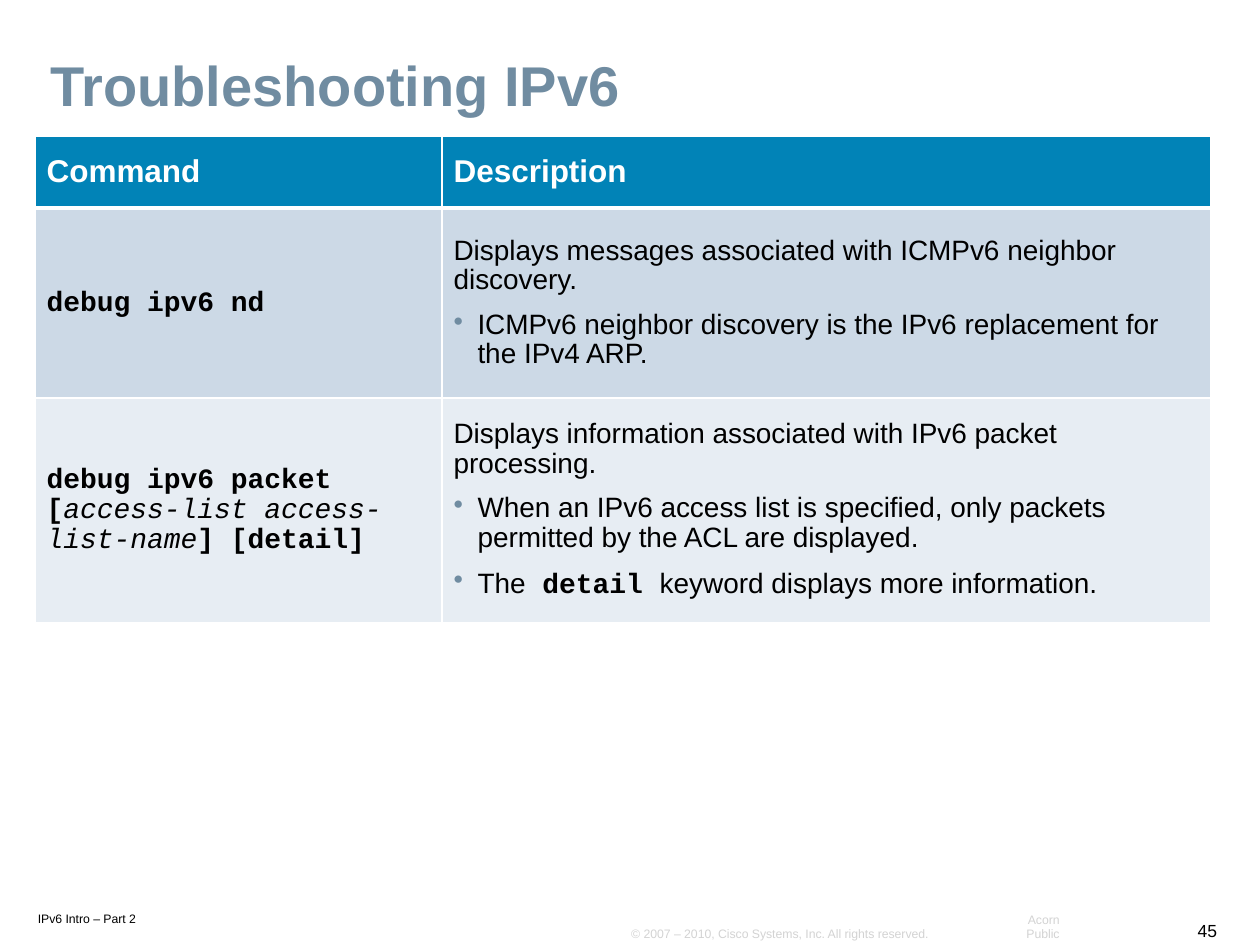
from pptx import Presentation, util as u
from pptx.dml.color import RGBColor
from pptx.enum import text
from pptx.oxml.ns import qn
from lxml import etree

COLORS = {"title": "708CA1", "header": "0183B7", "band_dark": "CCD9E6",
          "band_light": "E7EDF3", "white": "FFFFFF", "black": "000000", "legal": "D3D3D3"}
TITLE = "Troubleshooting IPv6"
HEADERS = ["Command", "Description"]
COMMANDS = [
    ([("debug ipv6 nd", "code")],
     [[("Displays messages associated with ICMPv6 neighbor discovery.", "plain")],
      [("ICMPv6 neighbor discovery is the IPv6 replacement for the IPv4 ARP.", "plain")]]),
    ([("debug ipv6 packet [", "code"), ("access-list access-list-name", "argument"),
      ("] [detail]", "code")],
     [[("Displays information associated with IPv6 packet processing.", "plain")],
      [("When an IPv6 access list is specified, only packets permitted by the ACL are displayed.",
        "plain")],
      [("The", "plain"), (" detail ", "code"),
       ("keyword displays more information.", "plain")]]),
]
STYLES = {"plain": ("Arial", False, False), "code": ("Courier New", True, False),
          "argument": ("Courier New", False, True), "header": ("Arial", True, False)}
COLUMN_WIDTHS = [3.23, 6.1]
ROW_HEIGHTS = [0.57, 1.51, 1.78]
FOOTERS = [
    ("IPv6 Intro – Part 2", (0.21, 7.18, 1.05, 0.21), 7, "black", "LEFT", True),
    ("45", (9.4, 7.25, 0.35, 0.26), 10, "black", "RIGHT", False),
    ("© 2007 – 2010, Cisco Systems, Inc. All rights reserved.",
     (4.92, 7.3, 2.57, 0.21), 7, "legal", "LEFT", False),
    ("Acorn Public", (7.79, 7.3, 0.71, 0.21), 7, "legal", "RIGHT", False),
]


def color(name):
    """Return the named colour."""
    return RGBColor.from_string(COLORS[name])


def set_font(font, size, shade, style="plain"):
    """Apply size, colour and a named style to a font."""
    font.name, font.bold, font.italic = STYLES[style]
    font.size = u.Pt(size)
    font.color.rgb = color(shade)


def set_margins(target):
    """Give a text frame or cell the common inner margins."""
    target.margin_left = target.margin_right = u.Inches(0.09)
    target.margin_top = target.margin_bottom = u.Inches(0.04)


def add_bullet(para):
    """Give a paragraph a hanging coloured bullet."""
    props = para._p.get_or_add_pPr()
    indent = u.Inches(0.19)
    props.set("marL", str(indent))
    props.set("indent", str(-indent))
    shade = etree.SubElement(props, qn("a:buClr"))
    etree.SubElement(shade, qn("a:srgbClr"), val=COLORS["title"])
    etree.SubElement(props, qn("a:buChar"), char="•")


def set_borders(cell, bottom):
    """Draw white cell borders with the given bottom width."""
    props = cell._tc.get_or_add_tcPr()
    widths = {"lnL": 1, "lnR": 1, "lnT": 1, "lnB": bottom}
    for index, (side, width) in enumerate(widths.items()):
        line = etree.Element(qn("a:" + side), w=str(u.Pt(width)))
        fill = etree.SubElement(line, qn("a:solidFill"))
        etree.SubElement(fill, qn("a:srgbClr"), val=COLORS["white"])
        props.insert(index, line)


def fill_cell(cell, paragraphs, fill, size=16, shade="black", bottom=1):
    """Write paragraphs into a cell, bulleting all after the first."""
    cell.fill.solid()
    cell.fill.fore_color.rgb = color(fill)
    cell.vertical_anchor = text.MSO_ANCHOR.MIDDLE
    set_margins(cell)
    set_borders(cell, bottom)
    frame = cell.text_frame
    for index, spans in enumerate(paragraphs):
        para = frame.add_paragraph() if index else frame.paragraphs[0]
        para.line_spacing = 0.95
        if index:
            para.space_before = u.Pt(8.5)
            add_bullet(para)
        for words, style in spans:
            span = para.add_run()
            span.text = words
            set_font(span.font, size, shade, style)


def add_title(page):
    """Place and format the title."""
    title = page.shapes.title
    title.left, title.top, title.width, title.height = map(u.Inches, (0.31, 0.4, 9.32, 0.6))
    frame = title.text_frame
    frame.text = TITLE
    frame.vertical_anchor = text.MSO_ANCHOR.MIDDLE
    set_margins(frame)
    para = frame.paragraphs[0]
    para.alignment = text.PP_ALIGN.LEFT
    para.line_spacing = 0.9
    set_font(para.font, 32, "title", "header")


def add_commands(page):
    """Build the command table."""
    place = (0.28, 1.08, sum(COLUMN_WIDTHS), sum(ROW_HEIGHTS))
    table = page.shapes.add_table(len(ROW_HEIGHTS), len(COLUMN_WIDTHS),
                                  *map(u.Inches, place)).table
    for column, width in zip(table.columns, COLUMN_WIDTHS):
        column.width = u.Inches(width)
    for row, height in zip(table.rows, ROW_HEIGHTS):
        row.height = u.Inches(height)
    for index, heading in enumerate(HEADERS):
        fill_cell(table.cell(0, index), [[(heading, "header")]], "header", 18, "white", 3)
    for index, (command, description) in enumerate(COMMANDS, 1):
        band = "band_dark" if index % 2 else "band_light"
        fill_cell(table.cell(index, 0), [command], band)
        fill_cell(table.cell(index, 1), description, band)


def add_footers(page):
    """Add the small texts along the bottom."""
    for words, place, size, shade, align, wrap in FOOTERS:
        box = page.shapes.add_textbox(*map(u.Inches, place))
        frame = box.text_frame
        frame.word_wrap = wrap
        frame.vertical_anchor = text.MSO_ANCHOR.BOTTOM
        set_margins(frame)
        para = frame.paragraphs[0]
        para.text = words
        para.alignment = text.PP_ALIGN[align]
        set_font(para.font, size, shade)


def main():
    """Build and save the slide."""
    deck = Presentation()
    deck.slide_width, deck.slide_height = u.Inches(10), u.Inches(7.5)
    page = deck.slides.add_slide(deck.slide_layouts[5])
    add_footers(page)
    add_title(page)
    add_commands(page)
    deck.save("out.pptx")


if __name__ == "__main__":
    main()
